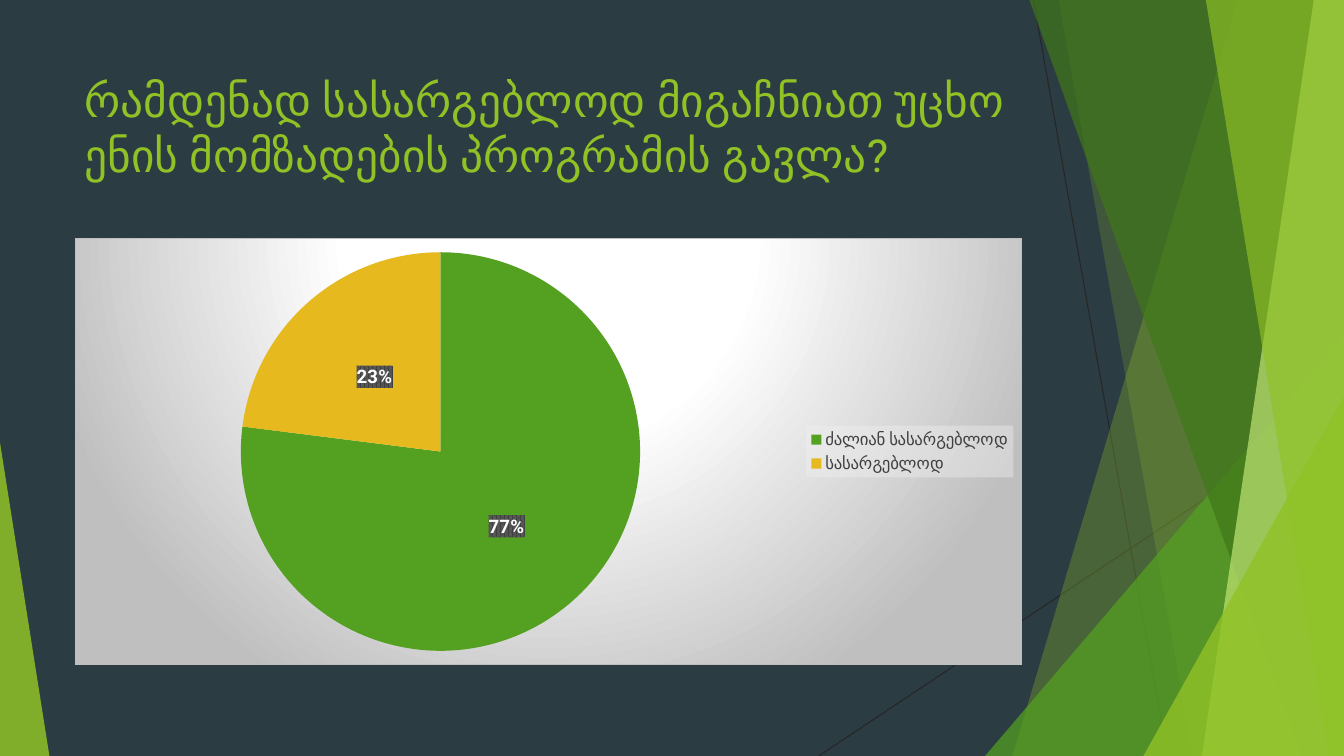
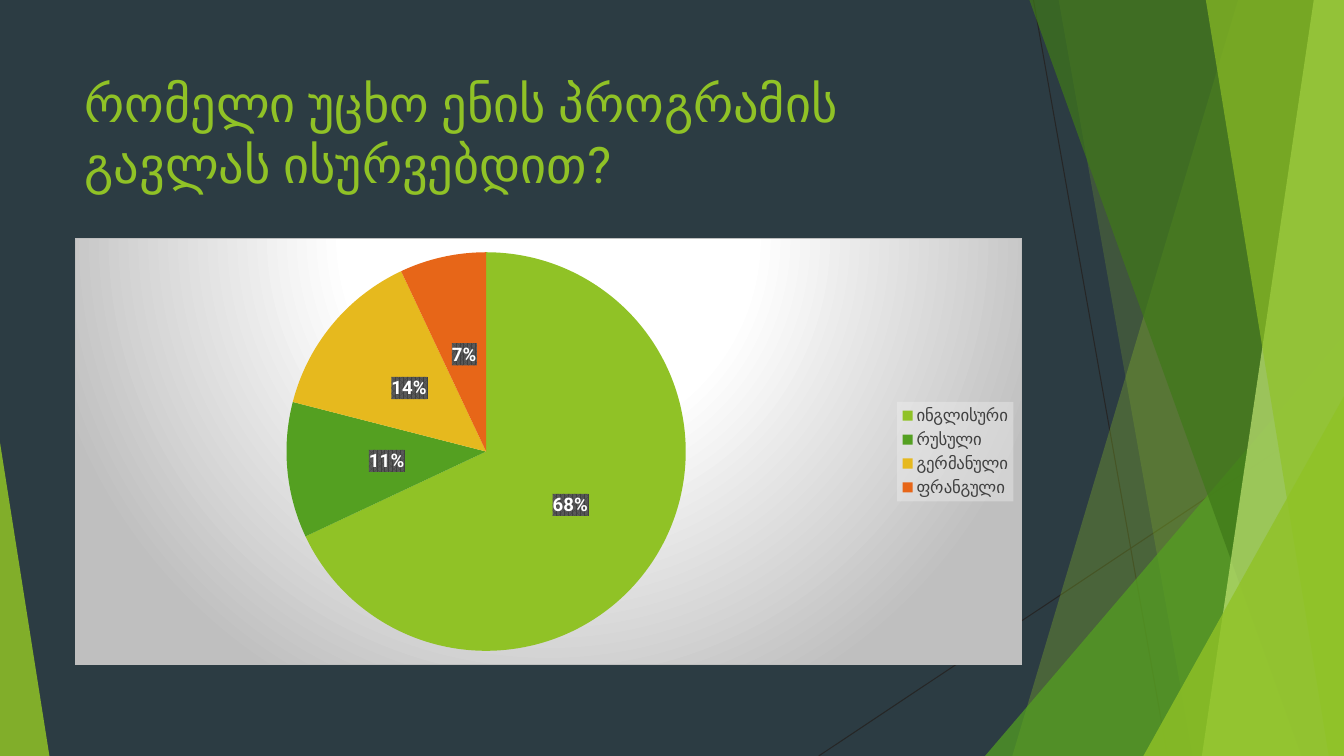
from dataclasses import dataclass

from lxml.etree import fromstring
from pptx import Presentation
from pptx.chart.data import CategoryChartData
from pptx.dml.color import RGBColor
from pptx.enum.chart import XL_CHART_TYPE, XL_LABEL_POSITION, XL_LEGEND_POSITION
from pptx.enum.shapes import MSO_CONNECTOR, MSO_SHAPE
from pptx.enum.text import MSO_ANCHOR, MSO_AUTO_SIZE
from pptx.oxml import parse_xml
from pptx.oxml.ns import nsdecls, qn
from pptx.shapes.autoshape import Shape
from pptx.shapes.group import GroupShape
from pptx.slide import Slide, SlideLayout
from pptx.util import Inches, Pt

WIDTH, HEIGHT = 13.33, 7.5
LEFT, CONTENT_WIDTH = 0.74, 9.4
FONT = "Roboto"

SLATE = RGBColor(0x2C, 0x3C, 0x43)
INK = RGBColor(0x26, 0x26, 0x26)
LIME = RGBColor(0x90, 0xC2, 0x26)
GREEN = RGBColor(0x54, 0xA0, 0x21)
FOREST = RGBColor(0x3F, 0x78, 0x19)
PALE_LIME = RGBColor(0xC0, 0xE4, 0x74)
GOLD = RGBColor(0xE6, 0xB9, 0x1E)
ORANGE = RGBColor(0xE7, 0x66, 0x18)
WHITE = RGBColor(0xFF, 0xFF, 0xFF)
MIST = RGBColor(0xF2, 0xF2, 0xF2)
SILVER = RGBColor(0xBF, 0xBF, 0xBF)
CHARCOAL = RGBColor(0x40, 0x40, 0x40)
GRAY = RGBColor(0x59, 0x59, 0x59)


@dataclass(frozen=True)
class Band:
    """A full-height area from a slanted left edge to the slide's right edge."""
    top_x: float
    bottom_x: float
    color: RGBColor
    opacity: int


@dataclass(frozen=True)
class Wedge:
    """A right triangle standing on the slide's bottom edge."""
    left: float
    width: float
    height: float
    tip: float
    color: RGBColor
    opacity: int


@dataclass(frozen=True)
class Slice:
    label: str
    percent: int
    color: RGBColor


@dataclass(frozen=True)
class Question:
    title: str
    title_size: float
    slices: tuple[Slice, ...]


RAYS = (((10.25, 0), (11.58, HEIGHT)), ((WIDTH, 4.03), (8.12, HEIGHT)))

FACETS = (
    Band(12.28, 10.04, LIME, 30),
    Band(10.5, 11.83, LIME, 20),
    Wedge(9.77, 3.56, 4.17, 1, GREEN, 72),
    Band(10.21, 12.91, FOREST, 70),
    Band(13.03, 11.92, PALE_LIME, 70),
    Band(11.96, 13.18, LIME, 65),
    Wedge(11.34, 1.99, 3.57, 1, LIME, 80),
    Wedge(0, 0.49, 3.11, 0, LIME, 85),
)

QUESTIONS = (
    Question(
        "რამდენად სასარგებლოდ მიგაჩნიათ უცხო ენის მომზადების პროგრამის გავლა?",
        32.4,
        (Slice("ძალიან სასარგებლოდ", 77, GREEN), Slice("სასარგებლოდ", 23, GOLD)),
    ),
    Question(
        "რომელი უცხო ენის პროგრამის გავლას ისურვებდით?",
        36,
        (
            Slice("ინგლისური", 68, LIME),
            Slice("რუსული", 11, GREEN),
            Slice("გერმანული", 14, GOLD),
            Slice("ფრანგული", 7, ORANGE),
        ),
    ),
)


def color_xml(color: RGBColor, inner: str = "") -> str:
    return f'<a:srgbClr val="{color}">{inner}</a:srgbClr>'


def chart_style(content: str):
    return parse_xml(f'<c:spPr {nsdecls("c", "a")}>{content}</c:spPr>')


PANEL_STYLE = (
    '<a:gradFill><a:gsLst>'
    + "".join(f'<a:gs pos="{stop}000">{color_xml(color)}</a:gs>'
              for stop, color in ((0, WHITE), (39, WHITE), (100, SILVER)))
    + '</a:gsLst><a:path path="circle">'
    '<a:fillToRect l="50000" t="-80000" r="50000" b="180000"/></a:path></a:gradFill>'
    f'<a:ln w="9525"><a:solidFill>{color_xml(SILVER)}</a:solidFill></a:ln>'
)
LEGEND_STYLE = f'<a:solidFill>{color_xml(MIST, "<a:alpha val=%s/>" % chr(34).join(("", "39000", "")))}</a:solidFill>'
LABEL_STYLE = (
    f'<a:pattFill prst="pct75"><a:fgClr>{color_xml(CHARCOAL)}</a:fgClr>'
    f'<a:bgClr>{color_xml(GRAY)}</a:bgClr></a:pattFill>'
)


def paint(shape: Shape, color: RGBColor, opacity: int) -> None:
    shape.shadow.inherit = False
    shape.line.fill.background()
    shape.fill.solid()
    shape.fill.fore_color.rgb = color
    fill_color = shape.element.spPr.find(f'{qn("a:solidFill")}/{qn("a:srgbClr")}')
    fill_color.append(parse_xml(f'<a:alpha {nsdecls("a")} val="{opacity * 1000}"/>'))


def draw_facet(group: GroupShape, facet: Band | Wedge) -> None:
    if isinstance(facet, Band):
        outline = group.shapes.build_freeform(Inches(facet.top_x), 0)
        corners = ((WIDTH, 0), (WIDTH, HEIGHT), (facet.bottom_x, HEIGHT))
        outline.add_line_segments([(Inches(x), Inches(y)) for x, y in corners])
        shape = outline.convert_to_shape()
    else:
        shape = group.shapes.add_shape(
            MSO_SHAPE.ISOSCELES_TRIANGLE, Inches(facet.left), Inches(HEIGHT - facet.height),
            Inches(facet.width), Inches(facet.height))
        shape.adjustments[0] = facet.tip
    paint(shape, facet.color, facet.opacity)


def draw_scenery(page: Slide) -> GroupShape:
    group = page.shapes.add_group_shape()
    for start, end in RAYS:
        ray = group.shapes.add_connector(
            MSO_CONNECTOR.STRAIGHT, *(Inches(value) for value in (*start, *end)))
        ray.line.color.rgb = INK
        ray.line.width = Pt(0.75)
        ray.element.spPr.append(parse_xml(f'<a:effectLst {nsdecls("a")}/>'))
    for facet in FACETS:
        draw_facet(group, facet)
    return group


def style_layout(layout: SlideLayout) -> None:
    layout.background.fill.solid()
    layout.background.fill.fore_color.rgb = SLATE
    title = layout.placeholders[0]
    title.left, title.top = Inches(LEFT), Inches(0.67)
    title.width, title.height = Inches(CONTENT_WIDTH), Inches(1.44)


def write_title(page: Slide, question: Question) -> None:
    frame = page.shapes.title.text_frame
    frame.text = question.title
    frame.word_wrap = True
    frame.auto_size = MSO_AUTO_SIZE.NONE
    frame.vertical_anchor = MSO_ANCHOR.TOP
    para = frame.paragraphs[0]
    para.alignment = 1
    para.font.name = FONT
    para.font.size = Pt(question.title_size)
    para.font.color.rgb = LIME


def style_font(font, size: float, color: RGBColor, bold: bool = False) -> None:
    font.name = FONT
    font.size = Pt(size)
    font.bold = bold
    font.color.rgb = color


def draw_pie(page: Slide, slices: tuple[Slice, ...]) -> None:
    data = CategoryChartData()
    data.categories = [part.label for part in slices]
    data.add_series("Series 1", [part.percent for part in slices])
    chart = page.shapes.add_chart(
        XL_CHART_TYPE.PIE, Inches(LEFT), Inches(2.36),
        Inches(CONTENT_WIDTH), Inches(4.24), data).chart
    chart.has_title = False
    style_font(chart.font, 10, WHITE)
    chart.element.find(qn("c:chart")).addnext(chart_style(PANEL_STYLE))

    chart.has_legend = True
    legend = chart.legend
    legend.position = XL_LEGEND_POSITION.RIGHT
    legend.include_in_layout = False
    style_font(legend.font, 12, CHARCOAL)

    plot = chart.plots[0]
    plot.vary_by_categories = True
    series = plot.series[0]
    for index, part in enumerate(slices):
        point = series.points[index].format
        point.fill.solid()
        point.fill.fore_color.rgb = part.color
        point.line.fill.background()

    labels = series.data_labels
    labels.show_percentage = True
    labels.show_value = False
    labels.number_format = "0%"
    labels.number_format_is_linked = False
    labels.position = XL_LABEL_POSITION.CENTER
    style_font(labels.font, 13.3, WHITE, bold=True)

    for holder, style in (("c:legend", LEGEND_STYLE), ("c:dLbls", LABEL_STYLE)):
        text_style = chart.element.find(f'.//{qn(holder)}/{qn("c:txPr")}')
        text_style.addprevious(chart_style(style))


def main() -> None:
    deck = Presentation()
    deck.slide_width, deck.slide_height = Inches(WIDTH), Inches(HEIGHT)
    layout = deck.slide_layouts[5]
    style_layout(layout)
    for number, question in enumerate(QUESTIONS):
        page = deck.slides.add_slide(layout)
        if number == 0:
            layout.shapes.element.append(draw_scenery(page).element)
        write_title(page, question)
        draw_pie(page, question.slices)
    deck.save("out.pptx")


if __name__ == "__main__":
    main()
